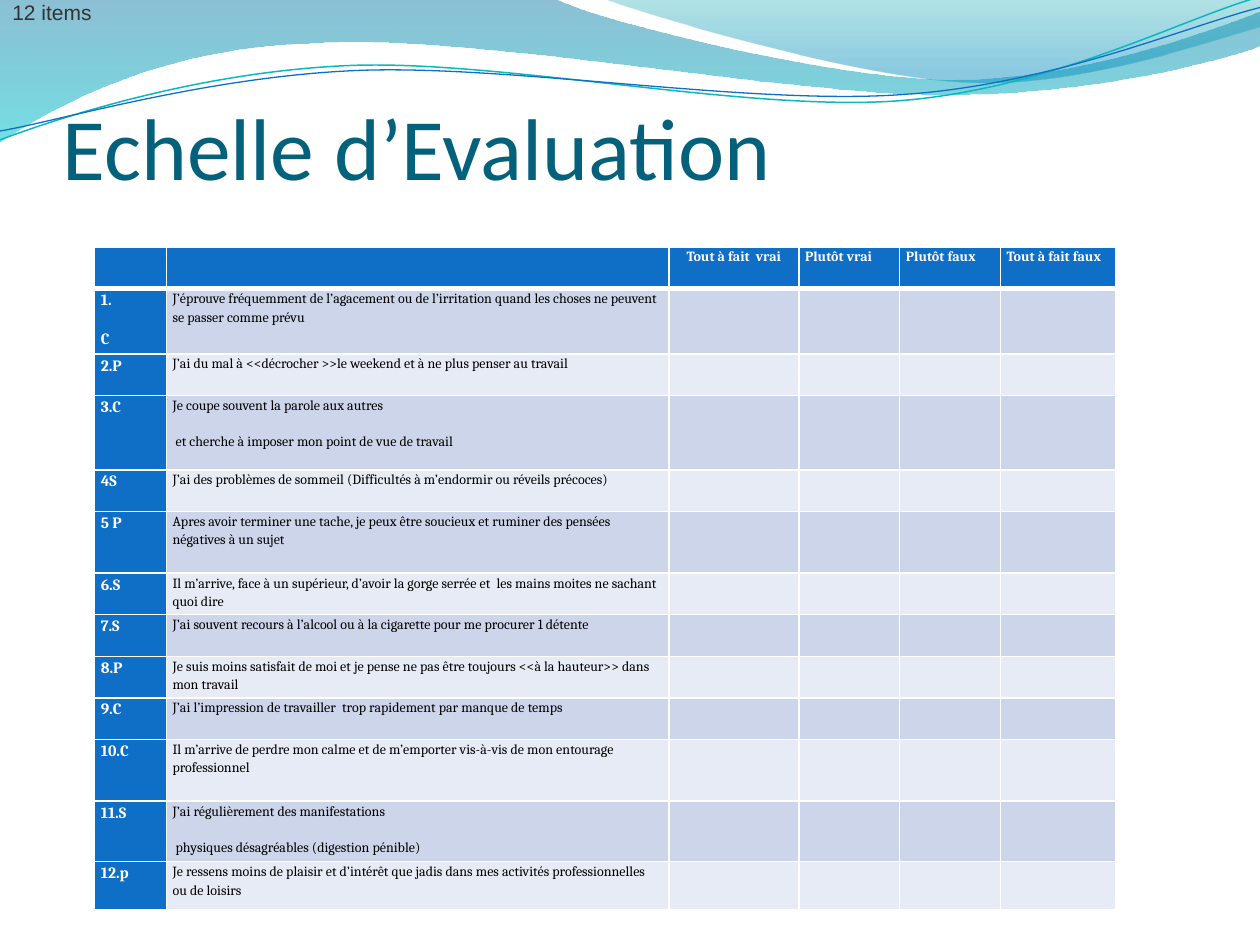
from dataclasses import dataclass
from math import cos, radians, sin
from lxml.etree import SubElement
from pptx import Presentation
from pptx.dml.color import RGBColor as RGB
from pptx.enum.text import MSO_ANCHOR as Anchor, PP_ALIGN as Align
from pptx.oxml.ns import qn
from pptx.util import Inches, Pt


@dataclass(frozen=True)
class Theme:
    title: str = "04617B"
    note: str = "333333"
    head: str = "0F6FC6"
    odd: str = "CCD5EA"
    even: str = "E7EBF5"
    white: str = "FFFFFF"
    black: str = "000000"
    teal: str = "0AB8BF"
    sans: str = "Calibri"
    plain: str = "Arial"
    serif: str = "Cambria"
    big: int = 50
    small: int = 12
    key: int = 9
    body: int = 8


T = Theme()
WIDE, HIGH = 10, 7.5
TILT = -2.7  # degrees, for both waves
TITLE = "Echelle d’Evaluation"
NOTE = "12 items"
HEADS = ["", "", "Tout à fait  vrai", "Plutôt vrai", "Plutôt faux", "Tout à fait faux"]
COLS = [0.57, 3.99, 1.03, 0.8, 0.8, 0.92]
LOW = 0.33  # height of the header and of the plain rows

# key, statement, row height; a line break starts a new paragraph
ITEMS = [
    ("1.\nC", "J’éprouve fréquemment de l’agacement ou de l’irritation quand les choses "
     "ne peuvent se passer comme prévu", 0.52),
    ("2.P", "J’ai du mal à <<décrocher >>le weekend et à ne plus penser au travail", LOW),
    ("3.C", "Je coupe souvent la parole aux autres\n"
     " et cherche à imposer mon point de vue de travail", 0.59),
    ("4S", "J’ai des problèmes de sommeil (Difficultés à m’endormir ou réveils précoces)", LOW),
    ("5 P", "Apres avoir terminer une tache, je peux être soucieux et ruminer des pensées "
     "négatives à un sujet", 0.49),
    ("6.S", "Il m’arrive, face à un supérieur, d’avoir la gorge serrée et  les mains moites "
     "ne sachant  quoi dire", LOW),
    ("7.S", "J’ai souvent recours à l’alcool ou à la cigarette pour me procurer 1 détente", LOW),
    ("8.P", "Je suis moins satisfait de moi et je pense ne pas être toujours "
     "<<à la hauteur>> dans mon travail", LOW),
    ("9.C", "J’ai l’impression de travailler  trop rapidement par manque de temps", LOW),
    ("10.C", "Il m’arrive de perdre mon calme et de m’emporter vis-à-vis de mon entourage "
     "professionnel", 0.49),
    ("11.S", "J’ai régulièrement des manifestations\n"
     " physiques désagréables (digestion pénible)", 0.48),
    ("12.p", "Je ressens moins de plaisir et d’intérêt que jadis dans mes activités "
     "professionnelles ou de loisirs", 0.38),
]

# Outlines in inches: a pair is a straight step, six numbers are a cubic curve
BANDS = [
    ([(0, 0), (4.4, -0.01), (4.76, 0.17, 6.64, 0.63, 7.58, 0.63),
      (8.53, 0.63, 9.58, 0.26, 10, 0.09), (10.01, 0.36),
      (9.83, 0.44, 8.7, 0.76, 7.46, 0.75), (6.22, 0.75, 3.82, 0.28, 2.57, 0.34),
      (1.29, 0.36, 0.46, 0.83, -0.01, 1.13)],
     [(0, "0074A1", 45), (1, "00C6CF", 55)]),
    ([(4.79, -0.01), (5.09, 0.11, 6.82, 0.62, 7.69, 0.65),
      (8.56, 0.69, 9.61, 0.32, 10, 0.21), (10, 0)],
     [(0, "00A1A9", 30), (0.8, "008BBF", 45)]),
]
# outline as it lies on the slide, centre of the turn, colour, width
WAVES = [
    ([(0, 1.11), (0.48, 0.93, 1.58, 0.57, 2.77, 0.52), (3.95, 0.47, 5.93, 0.89, 7.13, 0.8),
      (8.33, 0.71, 9.38, 0.15, 9.98, -0.02)], (4.99, 0.58), T.teal, 0.85),
    ([(0, 1.04), (0.47, 0.96, 1.64, 0.61, 2.83, 0.56), (4.03, 0.51, 5.97, 0.84, 7.17, 0.75),
      (8.36, 0.67, 9.41, 0.21, 10, 0.06)], (5, 0.59), T.head, 0.75),
]


def level(step, mid):
    """Turn the points of a step back about mid, so that the tilt restores them."""
    c, s = cos(radians(-TILT)), sin(radians(-TILT))
    flat = []
    for x, y in zip(step[::2], step[1::2]):
        dx, dy = x - mid[0], y - mid[1]
        flat += [mid[0] + dx * c - dy * s, mid[1] + dx * s + dy * c]
    return tuple(flat)


def draw(slide, steps, close):
    """Lay all points as straight steps, then merge each curve's three into one."""
    pts = [(Inches(x), Inches(y)) for s in steps for x, y in zip(s[::2], s[1::2])]
    pen = slide.shapes.build_freeform(*pts[0])
    pen.add_line_segments(pts[1:], close=close)
    form = pen.convert_to_shape()
    form.shadow.inherit = False
    lines = iter(list(form._element.iter(qn("a:lnTo"))))
    for step in steps[1:]:
        first = next(lines)
        if len(step) == 6:
            first.tag = qn("a:cubicBezTo")
            for _ in range(2):
                extra = next(lines)
                first.append(extra[0])
                extra.getparent().remove(extra)
    return form


def add_band(slide, steps, stops):
    form = draw(slide, steps, True)
    form.line.fill.background()
    form.fill.gradient()
    form.fill.gradient_angle = 270
    for stop, (pos, color, _) in zip(form.fill.gradient_stops, stops):
        stop.position = pos
        stop.color.rgb = RGB.from_string(color)
    tints = form._element.spPr.iter(qn("a:srgbClr"))
    for tint, (_, _, alpha) in zip(tints, stops):
        SubElement(tint, qn("a:alpha"), val=str(alpha * 1000))


def add_wave(slide, steps, mid, color, width):
    form = draw(slide, [level(step, mid) for step in steps], False)
    form.rotation = TILT
    form.fill.background()
    form.line.color.rgb = RGB.from_string(color)
    form.line.width = Pt(width)


def style(para, font, size, color, bold=False):
    for run in para.runs:
        run.font.name, run.font.size, run.font.bold = font, Pt(size), bold
        run.font.color.rgb = RGB.from_string(color)


def add_text(slide, text, box, inset, anchor, *look):
    frame = slide.shapes.add_textbox(*map(Inches, box)).text_frame
    frame.word_wrap = True
    frame.vertical_anchor = anchor
    frame.margin_left, frame.margin_top, frame.margin_right, frame.margin_bottom = map(Inches, inset)
    frame.text = text
    style(frame.paragraphs[0], *look)


def edge(cell, row):
    """Draw white borders, thick under the header row."""
    for side in "LRTB":
        thick = (row, side) == (0, "B")
        line = SubElement(cell._tc.get_or_add_tcPr(), qn("a:ln" + side),
                          w=str(Pt(3 if thick else 1)))
        SubElement(SubElement(line, qn("a:solidFill")), qn("a:srgbClr"), val=T.white)


def fill_cell(cell, text, row, col):
    cell.margin_left = cell.margin_right = Inches(0.05)
    cell.margin_top = cell.margin_bottom = 0
    edge(cell, row)
    strong = row == 0 or col == 0
    cell.fill.solid()
    cell.fill.fore_color.rgb = RGB.from_string(
        T.head if strong else T.odd if row % 2 else T.even)
    if not text:
        return
    cell.text_frame.text = text
    for para in cell.text_frame.paragraphs:
        para.line_spacing, para.space_after = 1.15, Pt(10)
        if (row, col) == (0, 2):
            para.alignment = Align.CENTER
        style(para, T.serif, T.key if row and not col else T.body,
              T.white if strong else T.black, strong)


def add_grid(slide):
    rows = [HEADS] + [[key, text] + [""] * 4 for key, text, _ in ITEMS]
    highs = [LOW] + [item[2] for item in ITEMS]
    box = (0.75, 1.96, sum(COLS), sum(highs))
    grid = slide.shapes.add_table(len(rows), len(COLS), *map(Inches, box)).table
    for col, wide in zip(grid.columns, COLS):
        col.width = Inches(wide)
    for r, (texts, high) in enumerate(zip(rows, highs)):
        grid.rows[r].height = Inches(high)
        for c, text in enumerate(texts):
            fill_cell(grid.cell(r, c), text, r, c)


def main():
    deck = Presentation()
    deck.slide_width, deck.slide_height = Inches(WIDE), Inches(HIGH)
    slide = deck.slides.add_slide(deck.slide_layouts[6])
    for band in BANDS:
        add_band(slide, *band)
    for wave in WAVES:
        add_wave(slide, *wave)
    add_text(slide, TITLE, (0.05 * WIDE, 0.32, 0.9 * WIDE, 1.25), (0, 0.05, 0, 0),
             Anchor.BOTTOM, T.sans, T.big, T.title)
    add_grid(slide)
    add_text(slide, NOTE, (0, 0, WIDE, 0.5), (0.1, 0, 0.1, 0),
             Anchor.TOP, T.plain, T.small, T.note)
    deck.save("out.pptx")


if __name__ == "__main__":
    main()
